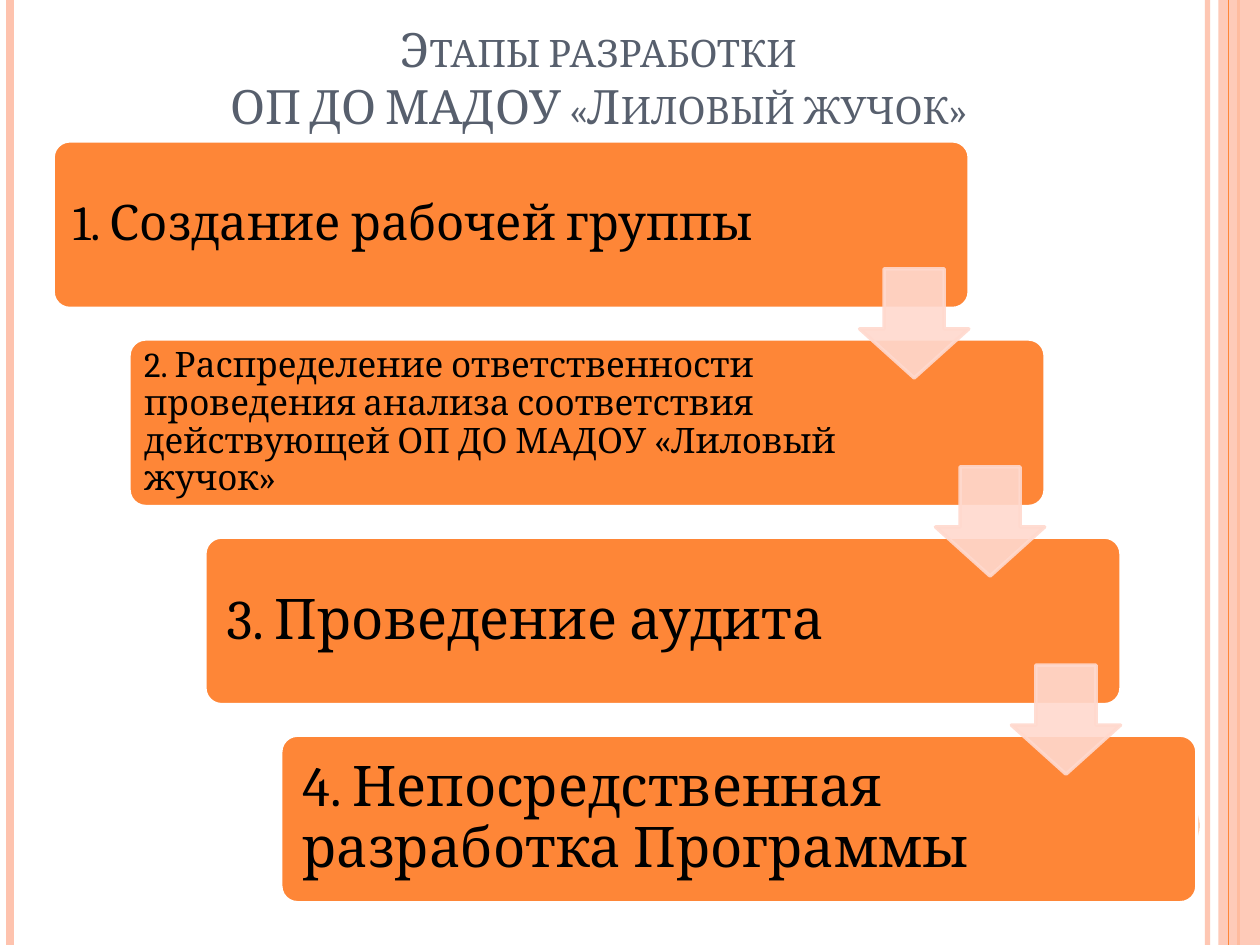
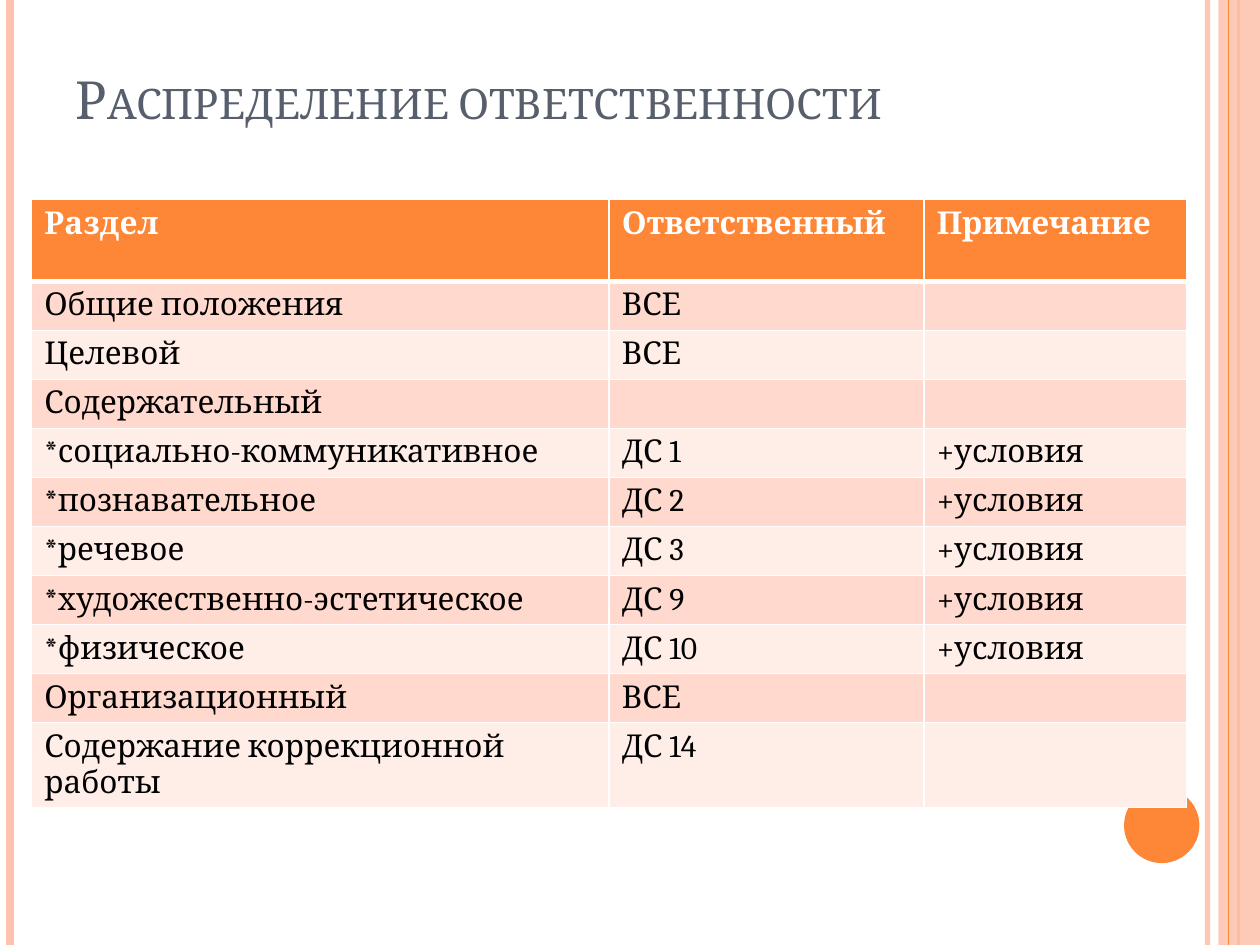
from dataclasses import dataclass

from lxml import etree
from pptx import Presentation
from pptx.dml.color import RGBColor
from pptx.enum.shapes import MSO_CONNECTOR, MSO_SHAPE
from pptx.enum.text import MSO_ANCHOR, MSO_AUTO_SIZE, PP_ALIGN
from pptx.oxml.ns import qn
from pptx.util import Cm, Pt

STRAIGHT = MSO_CONNECTOR.STRAIGHT
RECTANGLE, ELLIPSE = MSO_SHAPE.RECTANGLE, MSO_SHAPE.OVAL
ROUNDED, DOWN_ARROW = MSO_SHAPE.ROUNDED_RECTANGLE, MSO_SHAPE.DOWN_ARROW
MIDDLE, BOTTOM = MSO_ANCHOR.MIDDLE, MSO_ANCHOR.BOTTOM
LEFT, CENTER = PP_ALIGN.LEFT, PP_ALIGN.CENTER
NO_AUTOFIT = MSO_AUTO_SIZE.NONE
TITLE_ONLY = 5


@dataclass(frozen=True)
class Theme:
    font: str = "Cambria"
    accent: str = "FE8637"
    stripe: str = "FEC3AE"
    pale: str = "FFD9CE"
    palest: str = "FFEDE8"
    title: str = "575F6D"
    white: str = "FFFFFF"
    black: str = "000000"
    two_line_title_size: int = 27
    title_size: int = 30
    table_size: int = 18


@dataclass(frozen=True)
class Box:
    """Position and size in centimetres."""
    left: float
    top: float
    width: float
    height: float

    def lengths(self):
        return Cm(self.left), Cm(self.top), Cm(self.width), Cm(self.height)


THEME = Theme()
PAGE = Box(0, 0, 25.4, 19.05)
PROGRAMME = "ОП ДО МАДОУ «Лиловый жучок»"

# Text, type size and inner margin of each step
STEPS = [
    ("1. Создание рабочей группы", 28, 0.3),
    ("2. Распределение ответственности проведения анализа соответствия "
     f"действующей {PROGRAMME}", 20, 0.21),
    ("3. Проведение аудита", 32, 0.34),
    ("4. Непосредственная разработка Программы", 32, 0.34),
]

RESPONSIBILITIES = [
    ("Раздел", "Ответственный", "Примечание"),
    ("Общие положения", "ВСЕ", ""),
    ("Целевой", "ВСЕ", ""),
    ("Содержательный", "", ""),
    ("*социально-коммуникативное", "ДС 1", "+условия"),
    ("*познавательное", "ДС 2", "+условия"),
    ("*речевое", "ДС 3", "+условия"),
    ("*художественно-эстетическое", "ДС 9", "+условия"),
    ("*физическое", "ДС 10", "+условия"),
    ("Организационный", "ВСЕ", ""),
    ("Содержание коррекционной работы", "ДС 14", ""),
]


def rgb(value):
    return RGBColor.from_string(value)


def set_opacity(shape, percent):
    for color in shape._element.spPr.iter(qn("a:srgbClr")):
        etree.SubElement(color, qn("a:alpha"), val=str(percent * 1000))


def add_run(paragraph, text, size, color, bold=False):
    run = paragraph.add_run()
    run.text = text
    font = run.font
    font.name, font.size, font.bold = THEME.font, Pt(size), bold
    font.color.rgb = rgb(color)
    return run


def set_empty_font(paragraph, size):
    """Give a paragraph without text its font, which sets the row height."""
    properties = etree.SubElement(
        paragraph._p, qn("a:endParaRPr"), sz=str(size * 100))
    etree.SubElement(properties, qn("a:latin"), typeface=THEME.font)


def add_filled_shape(slide, kind, box, fill, line=None):
    shape = slide.shapes.add_shape(kind, *box.lengths())
    shape.shadow.inherit = False
    shape.fill.solid()
    shape.fill.fore_color.rgb = rgb(fill)
    if line:
        shape.line.color.rgb = rgb(line)
        shape.line.width = Pt(2)
    else:
        shape.line.fill.background()
    return shape


def add_stripe(slide, x, color, width):
    stripe = slide.shapes.add_connector(
        STRAIGHT, Cm(x), Cm(PAGE.top), Cm(x), Cm(PAGE.height))
    stripe.line.color.rgb = rgb(color)
    stripe.line.width = Pt(width)
    etree.SubElement(stripe._element.spPr, qn("a:effectLst"))
    return stripe


def add_decoration(slide):
    """Edge stripes, right band and corner disc of every slide."""
    set_opacity(add_stripe(slide, 24.34, THEME.stripe, 3), 93)
    add_stripe(slide, 0.21, THEME.stripe, 4.5)
    add_stripe(slide, 24.97, THEME.accent, 1.5)
    band = Box(24.56, 0, PAGE.width - 24.56, PAGE.height)
    set_opacity(add_filled_shape(slide, RECTANGLE, band, THEME.stripe), 87)
    add_stripe(slide, 24.77, THEME.accent, 0.75)
    add_filled_shape(slide, ELLIPSE, Box(22.66, 15.88, 1.52, 1.52), THEME.accent)


def set_title(slide, box, lines, size, alignment):
    title = slide.shapes.title
    title.left, title.top, title.width, title.height = box.lengths()
    frame = title.text_frame
    frame.auto_size = NO_AUTOFIT
    frame.vertical_anchor = BOTTOM
    paragraph = frame.paragraphs[0]
    paragraph.alignment = alignment
    for index, line in enumerate(lines):
        if index:
            paragraph.add_line_break()
        run = add_run(paragraph, line, size, THEME.title)
        run.font._element.set("cap", "small")


def add_slide(presentation):
    slide = presentation.slides.add_slide(presentation.slide_layouts[TITLE_ONLY])
    add_decoration(slide)
    return slide


def add_step_card(slide, box, text, size, margin):
    card = add_filled_shape(slide, ROUNDED, box, THEME.accent, THEME.white)
    card.adjustments[0] = 0.1
    frame = card.text_frame
    frame.word_wrap = True
    frame.vertical_anchor = MIDDLE
    frame.margin_left = frame.margin_top = frame.margin_bottom = Cm(margin)
    # The right side stays free for the arrows
    frame.margin_right = Cm(3.74 + margin)
    paragraph = frame.paragraphs[0]
    paragraph.alignment = LEFT
    paragraph.line_spacing = 0.9
    add_run(paragraph, text, size, THEME.black)


def add_staircase(slide, box, steps):
    """Cards descending to the right, joined by arrows."""
    card_width, card_height, arrow_size = 18.47, 3.38, 2.2
    shift = (box.width - card_width) / (len(steps) - 1)
    drop = (box.height - card_height) / (len(steps) - 1)
    corners = [(box.left + i * shift, box.top + i * drop)
               for i in range(len(steps))]

    for (left, top), step in zip(corners, steps):
        add_step_card(slide, Box(left, top, card_width, card_height), *step)

    for left, top in corners[:-1]:
        place = Box(left + 16.26, top + 2.58, arrow_size, arrow_size)
        arrow = add_filled_shape(slide, DOWN_ARROW, place, THEME.pale, THEME.pale)
        arrow.adjustments[0], arrow.adjustments[1] = 0.55, 0.45
        set_opacity(arrow, 90)


def set_borders(cell, widths):
    properties = cell._tc.get_or_add_tcPr()
    for side, width in widths.items():
        line = etree.SubElement(properties, qn(f"a:ln{side}"), w=str(Pt(width)))
        fill = etree.SubElement(line, qn("a:solidFill"))
        etree.SubElement(fill, qn("a:srgbClr"), val=THEME.white)


def add_responsibility_table(slide, box, rows, column_widths):
    header_height = 1.65
    row_height = (box.height - header_height) / (len(rows) - 1)
    table = slide.shapes.add_table(
        len(rows), len(column_widths), *box.lengths()).table
    table.first_row = table.horz_banding = False
    for column, width in zip(table.columns, column_widths):
        column.width = Cm(width)

    for r, values in enumerate(rows):
        is_header = r == 0
        table.rows[r].height = Cm(header_height if is_header else row_height)
        band = THEME.pale if r % 2 else THEME.palest
        for c, value in enumerate(values):
            cell = table.cell(r, c)
            # A thick rule parts the header from the body
            set_borders(cell, {"L": 1, "R": 1, "T": 3 if r == 1 else 1,
                               "B": 3 if is_header else 1})
            cell.fill.solid()
            cell.fill.fore_color.rgb = rgb(THEME.accent if is_header else band)
            paragraph = cell.text_frame.paragraphs[0]
            if value:
                add_run(paragraph, value, THEME.table_size,
                        THEME.white if is_header else THEME.black, is_header)
            else:
                set_empty_font(paragraph, THEME.table_size)


def build_stages_slide(presentation):
    slide = add_slide(presentation)
    set_title(slide, Box(1.7, 0.2, 20.75, 2.62),
              ["Этапы разработки", PROGRAMME],
              THEME.two_line_title_size, CENTER)
    add_staircase(slide, Box(1.07, 2.84, 23.06, 15.36), STEPS)


def build_responsibility_slide(presentation):
    slide = add_slide(presentation)
    set_title(slide, Box(1.27, 0.76, 20.75, 1.98),
              ["Распределение ответственности"], THEME.title_size, LEFT)
    add_responsibility_table(slide, Box(0.64, 4.02, 23.28, 11.4),
                             RESPONSIBILITIES, (11.64, 6.35, 5.29))


def main():
    presentation = Presentation()
    presentation.slide_width = Cm(PAGE.width)
    presentation.slide_height = Cm(PAGE.height)
    build_stages_slide(presentation)
    build_responsibility_slide(presentation)
    presentation.save("out.pptx")


if __name__ == "__main__":
    main()
